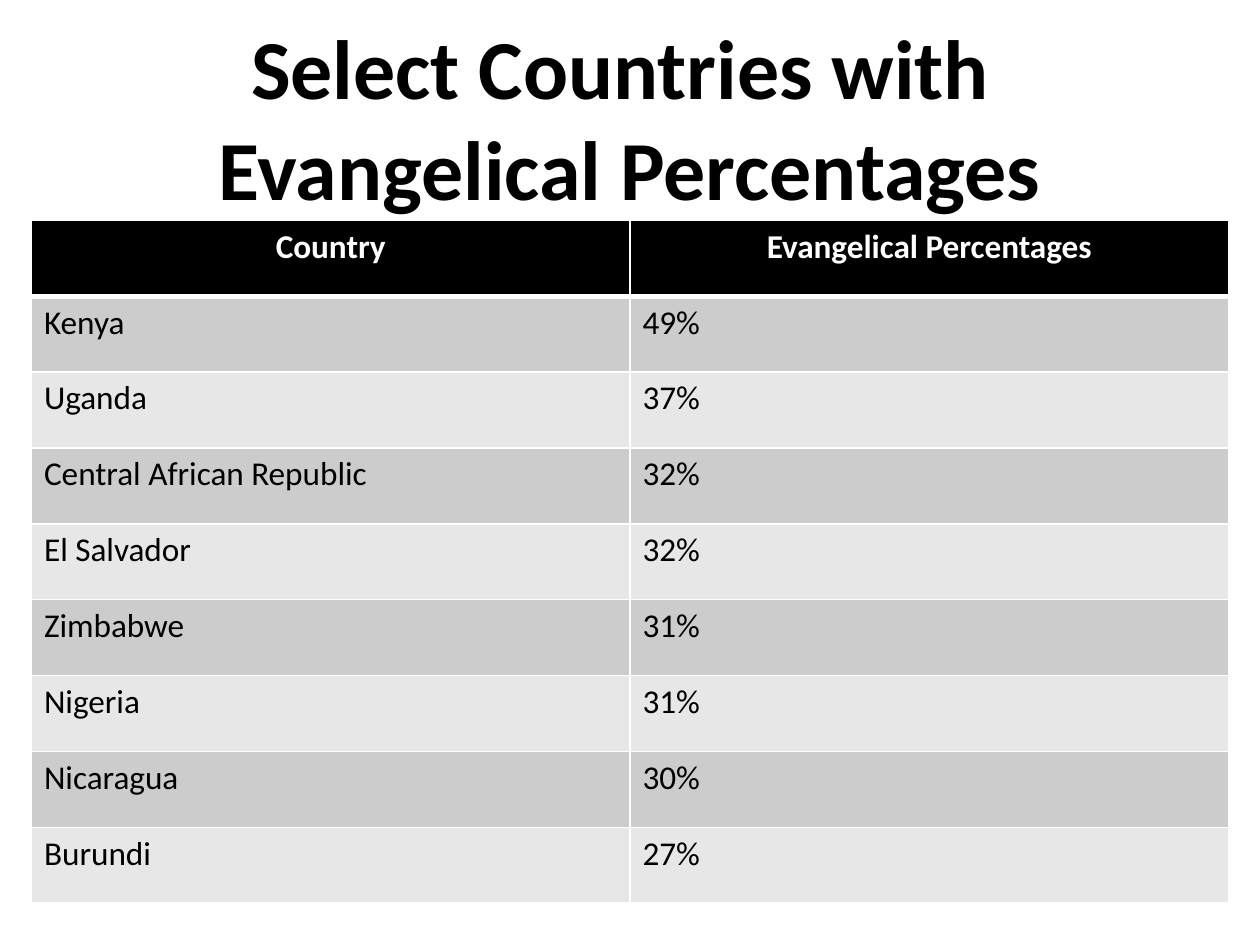
from lxml import etree
from pptx import Presentation
from pptx.dml.color import RGBColor
from pptx.enum import text
from pptx.oxml.ns import qn
from pptx.util import Inches, Pt

FONT = "Calibri"
ROWS = [
    ("Country", "Evangelical Percentages"),
    ("Kenya", "49%"),
    ("Uganda", "37%"),
    ("Central African Republic", "32%"),
    ("El Salvador", "32%"),
    ("Zimbabwe", "31%"),
    ("Nigeria", "31%"),
    ("Nicaragua", "30%"),
    ("Burundi", "27%"),
]


def rgb(value):
    return RGBColor.from_string(value)


def format_paragraph(p, size, color, bold, align):
    p.alignment = align
    p.font.name = FONT
    p.font.size = Pt(size)
    p.font.bold = bold
    p.font.color.rgb = rgb(color)


def set_borders(cell, color, top=1, bottom=1):
    tc_pr = cell._tc.get_or_add_tcPr()
    for side, width in (("L", 1), ("R", 1), ("T", top), ("B", bottom)):
        ln = etree.SubElement(tc_pr, qn(f"a:ln{side}"), w=str(Pt(width)))
        fill = etree.SubElement(ln, qn("a:solidFill"))
        etree.SubElement(fill, qn("a:srgbClr"), val=color)


def place_title(slide, left, top, width, height):
    title = slide.shapes.title
    title.left, title.top, title.width, title.height = left, top, width, height
    tf = title.text_frame
    tf.text = "Select Countries with \vEvangelical Percentages"
    tf.word_wrap = True
    tf.auto_size = text.MSO_AUTO_SIZE.NONE
    tf.vertical_anchor = text.MSO_ANCHOR.MIDDLE
    format_paragraph(tf.paragraphs[0], 48, "000000", True, text.PP_ALIGN.CENTER)


def place_table(slide, left, top, width, height):
    table = slide.shapes.add_table(
        len(ROWS), len(ROWS[0]), left, top, width, height).table
    for i, row in enumerate(ROWS):
        header = i == 0
        for j, value in enumerate(row):
            cell = table.cell(i, j)
            # The rule under the header is heavier than the others
            set_borders(cell, "FFFFFF", top=3 if i == 1 else 1,
                        bottom=3 if header else 1)
            cell.fill.solid()
            band = "CCCCCC" if i % 2 else "E7E7E7"
            cell.fill.fore_color.rgb = rgb("000000" if header else band)
            cell.text = value
            format_paragraph(
                cell.text_frame.paragraphs[0], 19,
                "FFFFFF" if header else "000000", header,
                text.PP_ALIGN.CENTER if header else text.PP_ALIGN.LEFT)


def main():
    prs = Presentation()
    prs.slide_width, prs.slide_height = Inches(10), Inches(7.5)
    slide = prs.slides.add_slide(prs.slide_layouts.get_by_name("Title Only"))
    # Heading
    place_title(slide, Inches(0.5), Inches(0.3), Inches(9), Inches(1.25))
    # Country table
    place_table(slide, Inches(0.25), Inches(1.75), Inches(9.5), Inches(5.42))
    prs.save("out.pptx")


if __name__ == "__main__":
    main()
